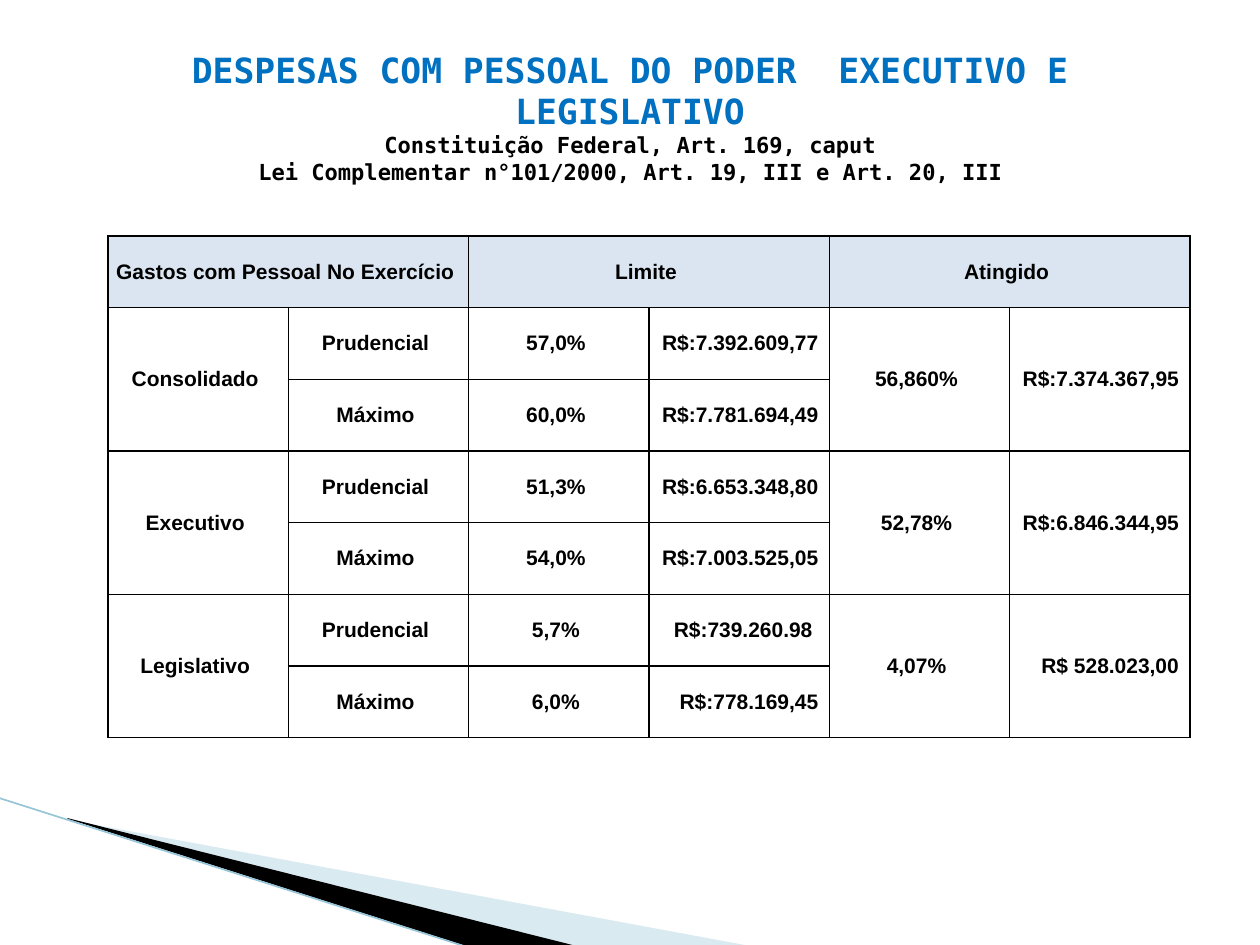
from lxml.etree import SubElement
from pptx import Presentation
from pptx.dml.color import RGBColor
from pptx.enum.shapes import MSO_CONNECTOR as CONN
from pptx.enum.text import MSO_ANCHOR as ANCHOR, PP_ALIGN as ALIGN
from pptx.oxml.ns import qn
from pptx.util import Emu, Pt

SCALE = 914400 / 126
BORDERS = ("a:lnL", "a:lnR", "a:lnT", "a:lnB")

TITLE = [
    ("DESPESAS COM PESSOAL DO PODER  EXECUTIVO E LEGISLATIVO", 19.8, "0070C0"),
    ("Constituição Federal, Art. 169, caput", 12.6, "000000"),
    ("Lei Complementar n°101/2000, Art. 19, III e Art. 20, III", 12.6, "000000"),
]
ROWS = [
    ["Gastos com Pessoal No Exercício", "", "Limite", "", "Atingido", ""],
    ["Consolidado", "Prudencial", "57,0%", "R$:7.392.609,77", "56,860%", "R$:7.374.367,95"],
    ["", "Máximo", "60,0%", "R$:7.781.694,49", "", ""],
    ["Executivo", "Prudencial", "51,3%", "R$:6.653.348,80", "52,78%", "R$:6.846.344,95"],
    ["", "Máximo", "54,0%", "R$:7.003.525,05", "", ""],
    ["Legislativo", "Prudencial", "5,7%", "R$:739.260.98 ", "4,07%", "R$ 528.023,00"],
    ["", "Máximo", "6,0%", "R$:778.169,45", "", ""],
]
HEADER_MERGES = [((0, c), (0, c + 1)) for c in (0, 2, 4)]
BODY_MERGES = [((r, c), (r + 1, c)) for r in (1, 3, 5) for c in (0, 4, 5)]


def px(n):
    return Emu(round(n * SCALE))


def rgb(color):
    return RGBColor.from_string(color)


class Deck:
    title_font = "DejaVu Sans Mono"
    table_font = "Arial"
    ink = "000000"
    header_fill = "DBE5F1"

    def __init__(self, width, height):
        self.prs = Presentation()
        self.prs.slide_width, self.prs.slide_height = px(width), px(height)
        self.s = self.prs.slides.add_slide(self.prs.slide_layouts[6])

    def style(self, p, font, size, color, align):
        p.alignment = align
        p.font.name, p.font.size, p.font.bold = font, Pt(size), True
        p.font.color.rgb = rgb(color)

    def polygon(self, points, color, alpha=100):
        fb = self.s.shapes.build_freeform(*points[0], scale=SCALE)
        fb.add_line_segments(points[1:], close=True)
        sp = fb.convert_to_shape()
        sp.shadow.inherit = False
        sp.line.fill.background()
        sp.fill.solid()
        sp.fill.fore_color.rgb = rgb(color)
        if alpha < 100:
            clr = sp.fill._xPr.find(qn("a:solidFill"))[0]
            SubElement(clr, qn("a:alpha"), val=str(alpha * 1000))

    def line(self, x1, y1, x2, y2, color, width):
        ln = self.s.shapes.add_connector(CONN.STRAIGHT, px(x1), px(y1), px(x2), px(y2))
        ln.line.color.rgb = rgb(color)
        ln.line.width = Pt(width)
        SubElement(ln._element.spPr, qn("a:effectLst"))

    def text(self, x, y, w, h, lines):
        tf = self.s.shapes.add_textbox(px(x), px(y), px(w), px(h)).text_frame
        tf.word_wrap = True
        tf.vertical_anchor = ANCHOR.MIDDLE
        for i, (text, size, color) in enumerate(lines):
            p = tf.add_paragraph() if i else tf.paragraphs[0]
            p.text = text
            self.style(p, self.title_font, size, color, ALIGN.CENTER)

    def cell(self, cell, text, header, align):
        tcPr = cell._tc.get_or_add_tcPr()
        for tag in BORDERS:
            ln = SubElement(tcPr, qn(tag), w=str(Pt(1)))
            fill = SubElement(ln, qn("a:solidFill"))
            SubElement(fill, qn("a:srgbClr"), val=self.ink)
        if header:
            cell.fill.solid()
            cell.fill.fore_color.rgb = rgb(self.header_fill)
        else:
            cell.fill.background()
        cell.margin_left = cell.margin_right = px(5)
        cell.margin_top = cell.margin_bottom = px(5)
        cell.vertical_anchor = ANCHOR.MIDDLE
        p = cell.text_frame.paragraphs[0]
        if text:
            p.text = f"{text} "
        self.style(p, self.table_font, 12, self.ink, align)

    def table(self, x, y, w, h, rows, merges):
        shape = self.s.shapes.add_table(len(rows), len(rows[0]), px(x), px(y), px(w), px(h))
        table = shape.table
        for r, row in enumerate(rows):
            for c, text in enumerate(row):
                align = ALIGN.RIGHT if r and c in (3, 5) else ALIGN.CENTER
                self.cell(table.cell(r, c), text, r == 0, align)
        for first, last in merges:
            table.cell(*first).merge(table.cell(*last))


def main():
    deck = Deck(1260, 945)
    deck.polygon([(69, 820), (750, 946), (575, 946), (69, 819)], "A0CBDC", 40)
    deck.polygon([(67, 818), (576, 946), (469, 947), (68, 819)], "000000")
    deck.line(-1, 798, 467, 947, "97C5D8", 0.95)
    deck.text(63, 38, 1134, 157, TITLE)
    deck.table(108, 236, 1082, 502, ROWS, HEADER_MERGES + BODY_MERGES)
    deck.prs.save("out.pptx")


if __name__ == "__main__":
    main()
